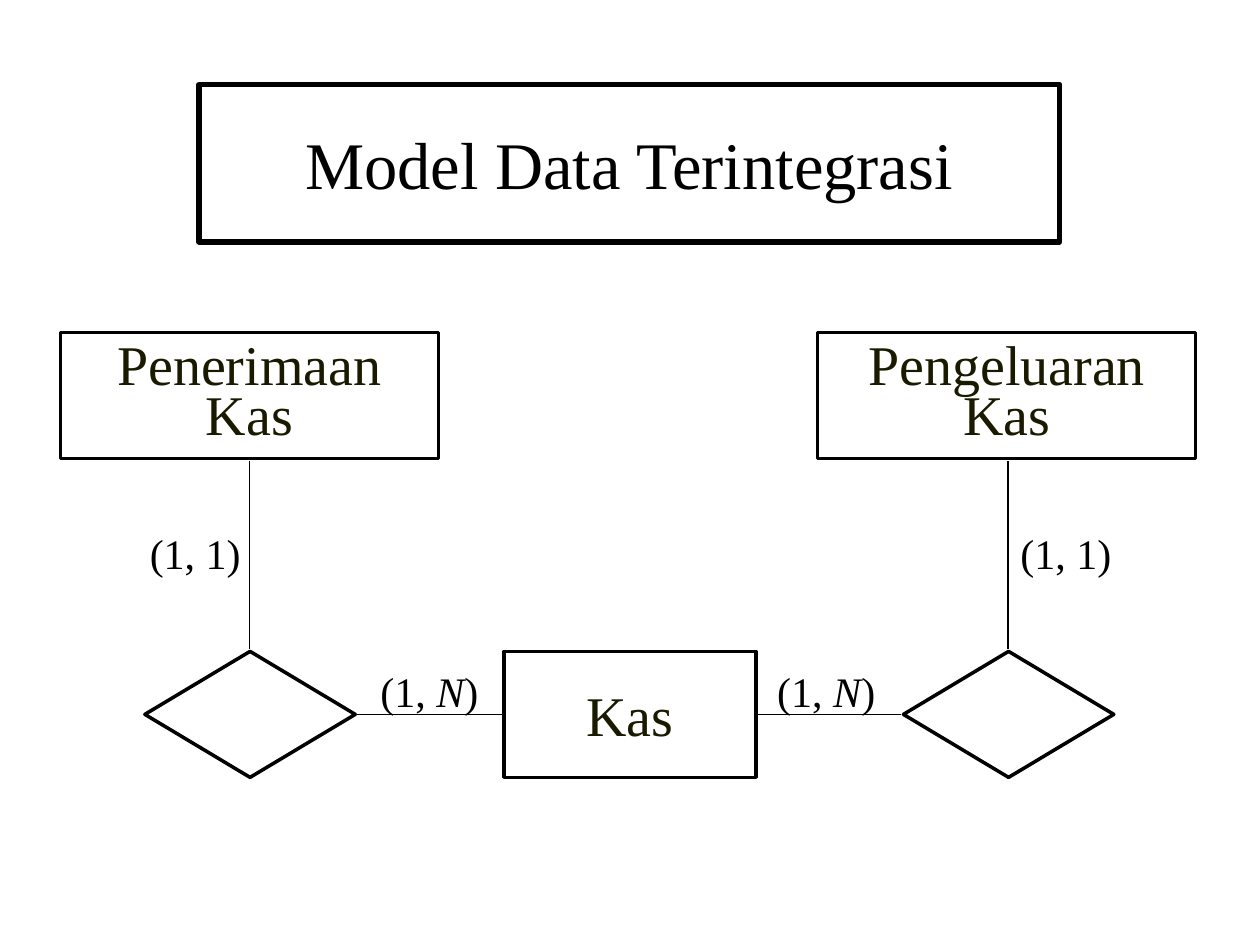
from lxml import etree
from pptx import Presentation
from pptx.dml.color import RGBColor
from pptx.enum.shapes import MSO_CONNECTOR, MSO_SHAPE
from pptx.enum.text import MSO_ANCHOR, PP_ALIGN
from pptx.oxml.ns import qn
from pptx.util import Inches, Pt

FONT = "Times New Roman"
BLACK, WHITE, INK = "000000", "FFFFFF", "1A1A00"


def color(hex_text):
    return RGBColor.from_string(hex_text)


def format_text(para, size, hex_text):
    for span in para.runs:
        span.font.name = FONT
        span.font.size = Pt(size)
        span.font.color.rgb = color(hex_text)


deck = Presentation()
deck.slide_width, deck.slide_height = Inches(10), Inches(7.5)
page = deck.slides.add_slide(deck.slide_layouts[5])

# Title in a heavy frame
title = page.shapes.title
title.left, title.top = Inches(1.58), Inches(0.67)
title.width, title.height = Inches(6.83), Inches(1.25)
title.line.color.rgb = color(BLACK)
title.line.width = Pt(3)
title.text_frame.text = "Model Data Terintegrasi"
title.text_frame.vertical_anchor = MSO_ANCHOR.MIDDLE
title.text_frame.paragraphs[0].alignment = PP_ALIGN.CENTER
format_text(title.text_frame.paragraphs[0], 38, BLACK)

# Entities and relationships: kind, left, top, width, lines of text
for kind, left, top, width, lines in [
    (MSO_SHAPE.RECTANGLE, 4, 5.17, 2, ["Kas"]),
    (MSO_SHAPE.DIAMOND, 7.17, 5.17, 1.67, []),
    (MSO_SHAPE.RECTANGLE, 6.49, 2.64, 3, ["Pengeluaran", "Kas"]),
    (MSO_SHAPE.DIAMOND, 1.15, 5.17, 1.67, []),
    (MSO_SHAPE.RECTANGLE, 0.48, 2.64, 3, ["Penerimaan", "Kas"]),
]:
    node = page.shapes.add_shape(
        kind, Inches(left), Inches(top), Inches(width), Inches(1))
    node.shadow.inherit = False
    node.fill.solid()
    node.fill.fore_color.rgb = color(WHITE)
    node.line.color.rgb = color(BLACK)
    node.line.width = Pt(2)
    if lines:
        frame = node.text_frame
        frame.text = "\n".join(lines)
        frame.word_wrap = False
        frame.vertical_anchor = MSO_ANCHOR.MIDDLE
        for para in frame.paragraphs:
            para.alignment = PP_ALIGN.CENTER
            if len(lines) > 1:
                para.line_spacing = 0.75
            format_text(para, 32, INK)

# Cardinality labels
for left, top, parts in [
    (1.09, 4.14, ["(1, 1)"]),
    (8, 4.14, ["(1, 1)"]),
    (2.92, 5.23, ["(1, ", "N", ")"]),
    (6.07, 5.23, ["(1, ", "N", ")"]),
]:
    box = page.shapes.add_textbox(
        Inches(left), Inches(top), Inches(1.08), Inches(0.5))
    box.text_frame.word_wrap = True
    para = box.text_frame.paragraphs[0]
    for part in parts:
        span = para.add_run()
        span.text = part
        span.font.italic = part == "N"
    format_text(para, 24, BLACK)

# Lines joining entities to relationships
for start_x, start_y, end_x, end_y in [
    (1.98, 3.66, 1.98, 5.15),
    (2.83, 5.67, 3.99, 5.67),
    (6.02, 5.67, 7.15, 5.67),
    (8, 3.66, 8, 5.15),
]:
    line = page.shapes.add_connector(
        MSO_CONNECTOR.STRAIGHT,
        Inches(start_x), Inches(start_y), Inches(end_x), Inches(end_y))
    line.line.color.rgb = color(BLACK)
    line.line.width = Pt(1)
    etree.SubElement(line._element.spPr, qn("a:effectLst"))

deck.save("out.pptx")
